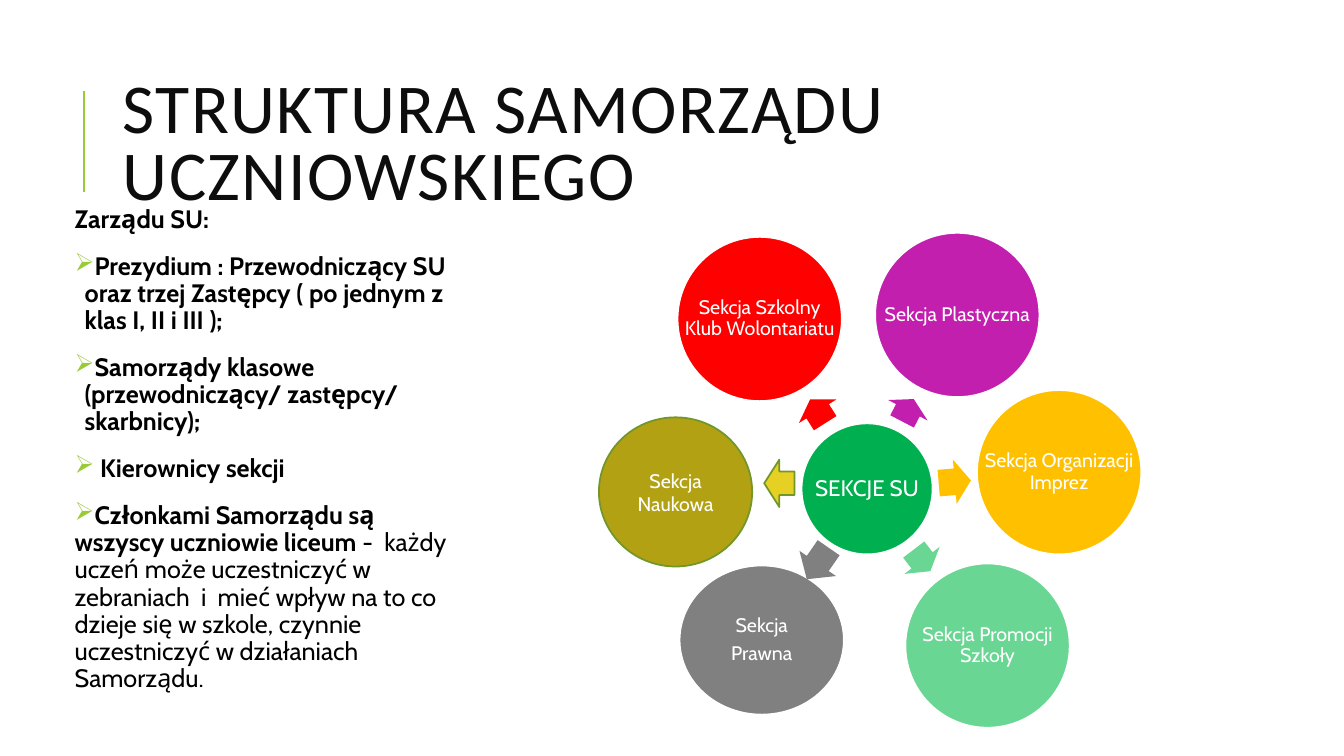
from lxml.etree import SubElement
from pptx import Presentation
from pptx.dml.color import RGBColor
from pptx.enum.shapes import MSO_CONNECTOR, MSO_SHAPE
from pptx.enum.text import MSO_ANCHOR, PP_ALIGN
from pptx.oxml.ns import qn
from pptx.util import Pt

PX = 9144
SLIDE_SIZE = (1333, 750)
COLORS = {
    "accent": "99CB38", "title": "0D0D0D", "black": "000000", "white": "FFFFFF",
    "green": "00B050", "purple": "C31FAF", "red": "FF0000", "gray": "808080",
    "mint": "6AD693", "amber": "FFC000", "olive": "B3A114", "yellow": "E6D024",
    "outline": "719629",
}
TITLE = "STRUKTURA SAMORZĄDU UCZNIOWSKIEGO"
TITLE_BOX = (112, 64, 1063, 164)
BODY_BOX = (69, 200, 396, 550)
RULE = (83, 190, 83, 90)
HANGING = 10

BODY = [
    {"runs": [("Zarządu SU:", True)], "bullet": False, "indent": 0},
    {"runs": [("Prezydium : Przewodniczący SU oraz trzej Zastępcy ( po jednym z klas I, II i III );", True)],
     "bullet": True, "indent": HANGING},
    {"runs": [("Samorządy klasowe (przewodniczący/ zastępcy/ skarbnicy);", True)],
     "bullet": True, "indent": HANGING},
    {"runs": [(" Kierownicy sekcji", True)], "bullet": True, "indent": HANGING},
    {"runs": [("Członkami Samorządu są wszyscy uczniowie liceum ", True),
              ("-  każdy uczeń może uczestniczyć w zebraniach  i  mieć wpływ na to co dzieje się "
               "w szkole, czynnie uczestniczyć w działaniach Samorządu.", False)],
     "bullet": True, "indent": 0},
]

CIRCLES = [
    ("SEKCJE SU", (795, 420, 130, 130), "green", "white", 16, 0.9, 5.6),
    ("Sekcja Plastyczna", (868, 231, 163, 163), "purple", "white", 14, 0.9, 5),
    ("Sekcja Szkolny Klub Wolontariatu", (672, 235, 163, 163), "red", "white", 14, 0.9, 5),
    ("Sekcja\nPrawna", (674, 561, 163, 148), "gray", "white", 14, 0.9, 5),
    ("Sekcja Promocji Szkoły", (898, 559, 163, 163), "mint", "white", 14, 0.9, 5),
    ("Sekcja Organizacji Imprez", (969, 387, 163, 163), "amber", "white", 14, 0.9, 5),
    ("Sekcja\nNaukowa", (594, 414, 152, 148), "olive", "outline", 14, 1.0, 0),
]

RIGHT, LEFT = MSO_SHAPE.RIGHT_ARROW, MSO_SHAPE.LEFT_ARROW
ARROWS = [
    (RIGHT, (888, 385, 25, 44), 297.5, 0.6, "purple", None),
    (RIGHT, (797, 386, 28, 44), 237.7, 0.6, "red", None),
    (RIGHT, (792, 537, 38, 44), 124.7, 0.6, "gray", None),
    (RIGHT, (901, 534, 27, 44), 52.5, 0.6, "mint", None),
    (RIGHT, (931, 456, 32, 44), 355.2, 0.6, "amber", None),
    (LEFT, (758, 456, 30, 47), 0, 0.5, "yellow", "outline"),
]


def scaled(lengths):
    return [length * PX for length in lengths]


def color(name):
    return RGBColor.from_string(COLORS[name])


def style_font(font, name, size, color_name, bold=False):
    font.name = name
    font.size = Pt(size)
    font.bold = bold
    font.color.rgb = color(color_name)


def add_shape(slide, kind, box, fill, outline):
    shape = slide.shapes.add_shape(kind, *scaled(box))
    shape.shadow.inherit = False
    shape.fill.solid()
    shape.fill.fore_color.rgb = color(fill)
    if outline:
        shape.line.color.rgb = color(outline)
        shape.line.width = Pt(1.25)
    else:
        shape.line.fill.background()
    return shape


def add_text_frame(slide, box, inset_x, inset_y, anchor):
    text_frame = slide.shapes.add_textbox(*scaled(box)).text_frame
    text_frame.word_wrap = True
    text_frame.vertical_anchor = anchor
    text_frame.margin_left = text_frame.margin_right = inset_x * PX
    text_frame.margin_top = text_frame.margin_bottom = inset_y * PX
    return text_frame


def add_bullet(paragraph, indent):
    properties = paragraph._p.get_or_add_pPr()
    properties.set("marL", str(indent * PX))
    properties.set("indent", str(-indent * PX))
    bullet_color = SubElement(properties, qn("a:buClr"))
    SubElement(bullet_color, qn("a:srgbClr"), val=COLORS["accent"])
    SubElement(properties, qn("a:buChar"), char="➢")


def add_title(slide):
    rule = slide.shapes.add_connector(MSO_CONNECTOR.STRAIGHT, *scaled(RULE))
    rule.line.color.rgb = color("accent")
    rule.line.width = Pt(1.5)
    SubElement(rule._element.spPr, qn("a:effectLst"))
    text_frame = add_text_frame(slide, TITLE_BOX, 10, 5, MSO_ANCHOR.MIDDLE)
    text_frame.text = TITLE
    paragraph = text_frame.paragraphs[0]
    paragraph.line_spacing = 0.8
    run = paragraph.runs[0]
    style_font(run.font, "Calibri", 50, "title")
    run.font._element.set("spc", "100")


def add_body(slide):
    text_frame = add_text_frame(slide, BODY_BOX, 5, 5, MSO_ANCHOR.TOP)
    for index, item in enumerate(BODY):
        paragraph = text_frame.add_paragraph() if index else text_frame.paragraphs[0]
        if item["bullet"]:
            add_bullet(paragraph, item["indent"])
        paragraph.line_spacing = 0.9
        paragraph.space_before = Pt(12 if index else 0)
        paragraph.space_after = Pt(2)
        for text, bold in item["runs"]:
            run = paragraph.add_run()
            run.text = text
            style_font(run.font, "Cabin", 18, "black", bold)


def add_circle(slide, label, box, fill, outline, size, spacing, after):
    add_shape(slide, MSO_SHAPE.OVAL, box, fill, outline)
    text_frame = add_text_frame(slide, box, 2, 2, MSO_ANCHOR.MIDDLE)
    text_frame.text = label
    for paragraph in text_frame.paragraphs:
        paragraph.alignment = PP_ALIGN.CENTER
        paragraph.line_spacing = spacing
        paragraph.space_after = Pt(after)
        style_font(paragraph.runs[0].font, "Cabin", size, "white")


def main():
    presentation = Presentation()
    presentation.slide_width, presentation.slide_height = scaled(SLIDE_SIZE)
    slide = presentation.slides.add_slide(presentation.slide_layouts[6])
    add_title(slide)
    add_body(slide)
    for circle in CIRCLES:
        add_circle(slide, *circle)
    for kind, box, rotation, shaft, fill, outline in ARROWS:
        arrow = add_shape(slide, kind, box, fill, outline)
        arrow.rotation = rotation
        arrow.adjustments[0] = shaft
    presentation.save("out.pptx")


if __name__ == "__main__":
    main()
